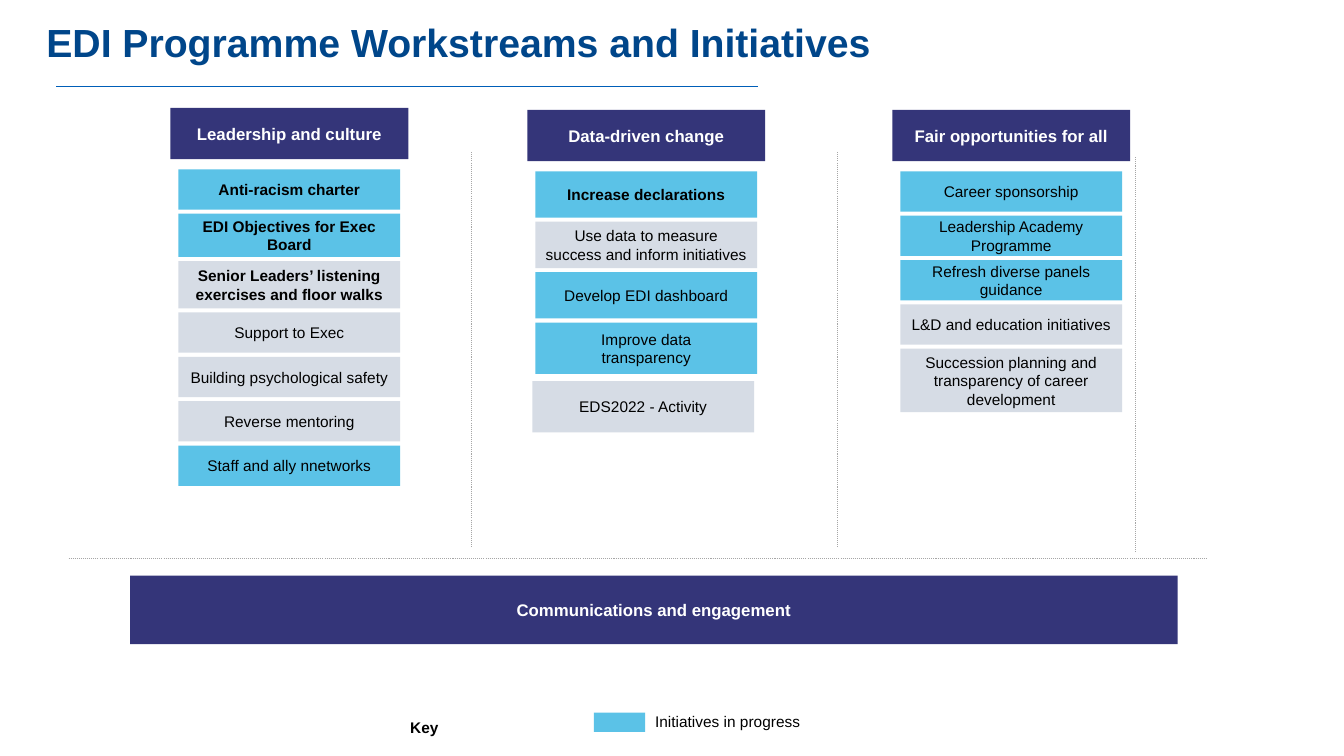
from lxml import etree
from pptx import Presentation
from pptx.dml.color import RGBColor
from pptx.enum import dml, shapes, text
from pptx.oxml import ns
from pptx.util import Inches, Pt

TITLE_BLUE = RGBColor(0x00, 0x46, 0x8A)
RULE_BLUE = RGBColor(0x00, 0x5E, 0xB8)
NAVY = RGBColor(0x34, 0x35, 0x79)
SKY = RGBColor(0x5B, 0xC2, 0xE7)
GREY = RGBColor(0xD6, 0xDC, 0xE5)
DIVIDER = RGBColor(0xA6, 0xA6, 0xA6)
WHITE = RGBColor(0xFF, 0xFF, 0xFF)
BLACK = RGBColor(0, 0, 0)

ITEM_WIDTH = 2.2
ITEM_GAP = 0.04

WORKSTREAMS = [
    (1.69, 1.07, "Leadership and culture", [
        ("Anti-racism charter", 0.4, SKY, True, 0.1),
        ("EDI Objectives for Exec Board", 0.43, SKY, True, 0.1),
        ("Senior Leaders’ listening exercises and floor walks", 0.47, GREY, True, 0.1),
        ("Support to Exec", 0.4, GREY, False, 0.1),
        ("Building psychological safety", 0.4, GREY, False, 0.1),
        ("Reverse mentoring", 0.4, GREY, False, 0.1),
        ("Staff and ally nnetworks", 0.4, SKY, False, 0.1),
    ]),
    (5.23, 1.09, "Data-driven change", [
        ("Increase declarations", 0.46, SKY, True, 0.1),
        ("Use data to measure success and inform initiatives", 0.46, GREY, False, 0.1),
        ("Develop EDI dashboard", 0.46, SKY, False, 0.1),
        ("Improve data transparency", 0.51, SKY, False, 0.2),
    ]),
    (8.85, 1.09, "Fair opportunities for all", [
        ("Career sponsorship", 0.4, SKY, False, 0.1),
        ("Leadership Academy Programme", 0.4, SKY, False, 0.1),
        ("Refresh diverse panels guidance", 0.4, SKY, False, 0.1),
        ("L&D and education initiatives", 0.4, GREY, False, 0.1),
        ("Succession planning and transparency of career development", 0.63, GREY, False, 0.1),
    ]),
]


def write_text(text_frame, content, size, color, bold, side=0.1, edge=0.05):
    """Fill a text frame with one formatted paragraph and return it."""
    text_frame.word_wrap = True
    text_frame.margin_left = text_frame.margin_right = Inches(side)
    text_frame.margin_top = text_frame.margin_bottom = Inches(edge)
    text_frame.text = content
    paragraph = text_frame.paragraphs[0]
    for run in paragraph.runs:
        run.font.name = "Arial"
        run.font.size = Pt(size)
        run.font.bold = bold
        run.font.color.rgb = color
    return paragraph


def add_box(slide, left, top, width, height, fill):
    """Add a flat filled rectangle."""
    shape = slide.shapes.add_shape(
        shapes.MSO_SHAPE.RECTANGLE, Inches(left), Inches(top), Inches(width), Inches(height))
    shape.shadow.inherit = False
    shape.fill.solid()
    shape.fill.fore_color.rgb = fill
    shape.line.fill.background()
    return shape


def add_label_box(slide, left, top, width, height, fill, content, size, color, bold, side, edge):
    """Add a rectangle with centred text."""
    text_frame = add_box(slide, left, top, width, height, fill).text_frame
    text_frame.vertical_anchor = text.MSO_ANCHOR.MIDDLE
    paragraph = write_text(text_frame, content, size, color, bold, side, edge)
    paragraph.alignment = text.PP_ALIGN.CENTER


def add_banner(slide, left, top, width, height, content):
    """Add a navy heading bar."""
    add_label_box(slide, left, top, width, height, NAVY, content, 12, WHITE, True, 0, 0)


def add_initiative(slide, left, top, height, fill, content, bold, side):
    """Add one initiative box."""
    add_label_box(slide, left, top, ITEM_WIDTH, height, fill, content, 11, BLACK, bold, side, 0.05)


def add_line(slide, start, end, color, width, dash=None):
    """Add a straight line without a shadow."""
    connector = slide.shapes.add_connector(
        shapes.MSO_CONNECTOR.STRAIGHT, *(Inches(value) for value in (*start, *end)))
    connector.line.color.rgb = color
    connector.line.width = Pt(width)
    if dash:
        connector.line.dash_style = dash
    etree.SubElement(connector._element.spPr, ns.qn("a:effectLst"))


def add_title(slide, left, top, width, height):
    """Place the title and the rule below it."""
    title = slide.shapes.title
    title.left, title.top, title.width, title.height = map(Inches, (left, top, width, height))
    title.text_frame.vertical_anchor = text.MSO_ANCHOR.TOP
    paragraph = write_text(
        title.text_frame, "EDI Programme Workstreams and Initiatives", 28, TITLE_BLUE, True, 0, 0)
    paragraph.alignment = text.PP_ALIGN.LEFT
    paragraph.line_spacing = 0.9
    rule_top = top + height + 0.16
    add_line(slide, (left + 0.1, rule_top), (left + 7.06, rule_top), RULE_BLUE, 0.5)


def add_workstream(slide, left, top, heading, initiatives):
    """Add a heading with its initiatives stacked below."""
    add_banner(slide, left, top, 2.36, 0.51, heading)
    item_top = top + 0.61
    for content, height, fill, bold, side in initiatives:
        add_initiative(slide, left + 0.08, item_top, height, fill, content, bold, side)
        item_top += height + ITEM_GAP


def add_dividers(slide, left, top, width, height):
    """Add the dotted lines between workstreams and above the banner."""
    for x, drop in ((4.68, 0), (8.31, 0), (11.26, 0.05)):
        add_line(slide, (x, top + drop), (x, top + drop + height), DIVIDER, 0.75,
                 dml.MSO_LINE.ROUND_DOT)
    bottom = top + height + 0.1
    add_line(slide, (left, bottom), (left + width, bottom), DIVIDER, 0.75, dml.MSO_LINE.ROUND_DOT)


def add_key(slide, left, top):
    """Add the colour key."""
    add_box(slide, left + 1.92, top, 0.51, 0.19, SKY)
    captions = (("Key", 0, 0, 1.8, True), ("Initiatives in progress", 2.43, -0.05, 1.84, False))
    for content, across, down, width, bold in captions:
        box = slide.shapes.add_textbox(
            Inches(left + across), Inches(top + down), Inches(width), Inches(0.29))
        write_text(box.text_frame, content, 11, BLACK, bold)


def main():
    """Build and save the slide."""
    presentation = Presentation()
    presentation.slide_width = Inches(13.33)
    presentation.slide_height = Inches(7.5)
    slide = presentation.slides.add_slide(presentation.slide_layouts[5])
    add_title(slide, 0.46, 0.23, 10.28, 0.47)
    add_dividers(slide, 0.68, 1.51, 11.29, 3.93)
    for workstream in WORKSTREAMS:
        add_workstream(slide, *workstream)
    add_initiative(slide, 5.28, 3.78, 0.51, GREY, "EDS2022 - Activity", False, 0.2)
    add_banner(slide, 1.29, 5.71, 10.39, 0.68, "Communications and engagement")
    add_key(slide, 3.97, 7.07)
    presentation.save("out.pptx")


if __name__ == "__main__":
    main()
